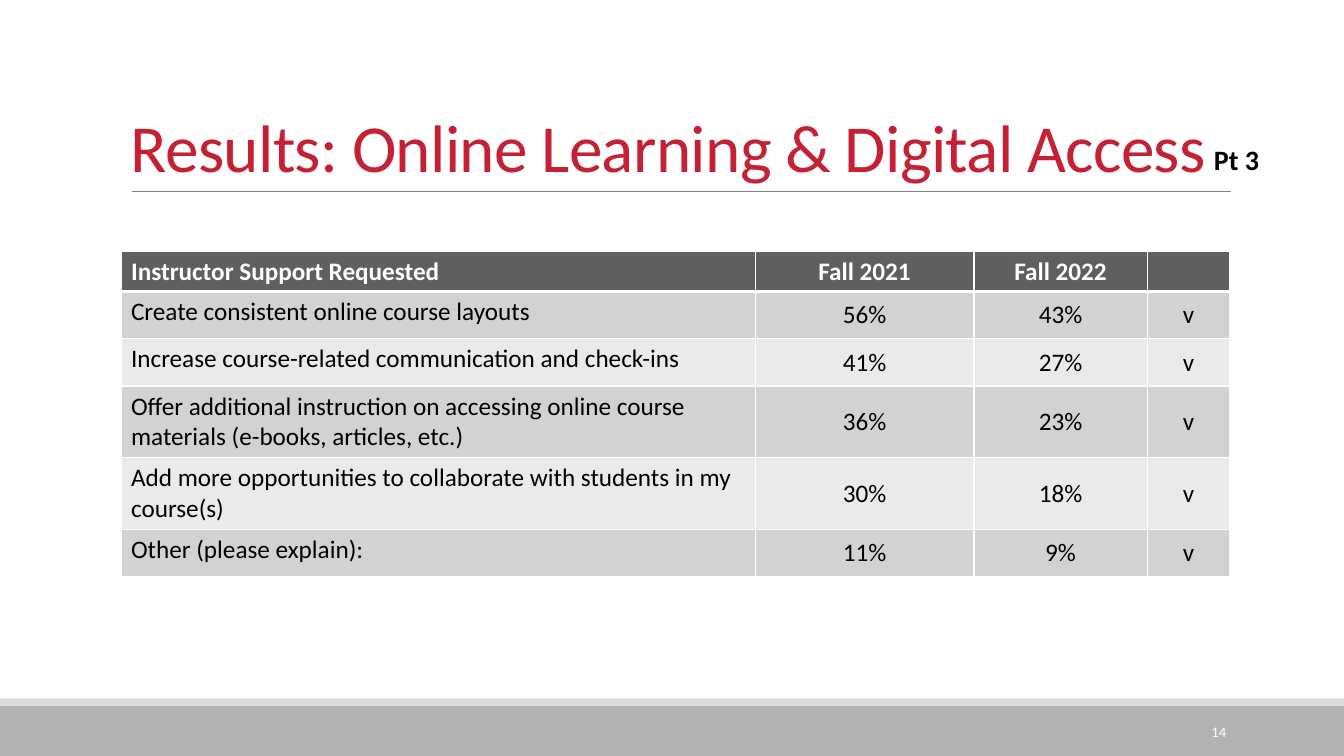
"""Build the slide on instructor support requested, with its table of survey shares."""
import lxml.etree
import pptx
import pptx.dml.color
import pptx.enum.shapes
import pptx.enum.text
import pptx.oxml.ns
import pptx.util

WIDTH, HEIGHT = 13.33, 7.5
FONT = "Calibri"
TITLE = "Results: Online Learning & Digital Access"
PART = "Pt 3"
PAGE = "14"
HEADER = ("Instructor Support Requested", "Fall 2021", "Fall 2022", "")
ANSWERS = [
    ("Create consistent online course layouts", "56%", "43%", "v"),
    ("Increase course-related communication and check-ins", "41%", "27%", "v"),
    ("Offer additional instruction on accessing online course materials (e-books, articles, etc.)", "36%", "23%", "v"),
    ("Add more opportunities to collaborate with students in my course(s)", "30%", "18%", "v"),
    ("Other (please explain):", "11%", "9%", "v"),
]
COLUMN_WIDTHS = (6.29, 2.17, 1.72, 0.82)
ROW_HEIGHTS = (0.39, 0.47, 0.47, 0.71, 0.71, 0.47)
HEADER_FILL, BODY_FILLS = "5F5F5F", ("D2D2D2", "EAEAEA")
BANDS = [(7, 0.5, "B2B2B2"), (6.93, 0.07, "DDDDDD")]
LEFT, TABLE_TOP, CONTENT_WIDTH = 1.2, 2.49, sum(COLUMN_WIDTHS)
RULE_LEFT, RULE_RIGHT, RULE_TOP = 1.31, 12.21, 1.9

ALIGN = pptx.enum.text.PP_ALIGN
ANCHOR = pptx.enum.text.MSO_ANCHOR
inches = pptx.util.Inches
points = pptx.util.Pt


def color(value):
    return pptx.dml.color.RGBColor.from_string(value)


def paint(fill, value):
    fill.solid()
    fill.fore_color.rgb = color(value)


def write(frame, text, size, value, bold=False, align=ALIGN.LEFT):
    paragraph = frame.paragraphs[0]
    paragraph.alignment = align
    run = paragraph.add_run()
    run.text = text
    run.font.name = FONT
    run.font.size = points(size)
    run.font.bold = bold
    run.font.color.rgb = color(value)
    return paragraph, run


def add_text(slide, box, anchor, text, size, value, wrap=True, **style):
    frame = slide.shapes.add_textbox(*map(inches, box)).text_frame
    frame.word_wrap = wrap
    frame.vertical_anchor = anchor
    return write(frame, text, size, value, **style)


def add_border(cell, side, width):
    properties = cell._tc.get_or_add_tcPr()
    tag = pptx.oxml.ns.qn
    line = lxml.etree.SubElement(properties, tag(f"a:ln{side}"), w=str(points(width)))
    fill = lxml.etree.SubElement(line, tag("a:solidFill"))
    lxml.etree.SubElement(fill, tag("a:srgbClr"), val="FFFFFF")


def add_bands(slide):
    for top, height, value in BANDS:
        band = slide.shapes.add_shape(
            pptx.enum.shapes.MSO_SHAPE.RECTANGLE, 0, inches(top), inches(WIDTH), inches(height))
        band.shadow.inherit = False
        paint(band.fill, value)
        band.line.fill.background()


def add_rule(slide):
    ends = map(inches, (RULE_LEFT, RULE_TOP, RULE_RIGHT, RULE_TOP))
    rule = slide.shapes.add_connector(pptx.enum.shapes.MSO_CONNECTOR.STRAIGHT, *ends)
    rule.line.color.rgb = color("808080")
    rule.line.width = points(0.5)
    lxml.etree.SubElement(rule._element.spPr, pptx.oxml.ns.qn("a:effectLst"))


def add_answers(slide):
    rows = [HEADER, *ANSWERS]
    box = map(inches, (LEFT, TABLE_TOP, CONTENT_WIDTH, sum(ROW_HEIGHTS)))
    table = slide.shapes.add_table(len(rows), len(HEADER), *box).table
    for column, width in zip(table.columns, COLUMN_WIDTHS):
        column.width = inches(width)
    for row_index, texts in enumerate(rows):
        table.rows[row_index].height = inches(ROW_HEIGHTS[row_index])
        is_header = row_index == 0
        for column_index, text in enumerate(texts):
            cell = table.cell(row_index, column_index)
            centred = column_index > 0
            if centred and not is_header:
                cell.vertical_anchor = ANCHOR.MIDDLE
            for side in "LRTB":
                heavy = (row_index, side) in ((0, "B"), (1, "T"))
                add_border(cell, side, 3 if heavy else 1)
            paint(cell.fill, HEADER_FILL if is_header else BODY_FILLS[(row_index - 1) % 2])
            if text:
                write(cell.text_frame, text, 18, "FFFFFF" if is_header else "000000",
                      bold=is_header, align=ALIGN.CENTER if centred else ALIGN.LEFT)


def main():
    presentation = pptx.Presentation()
    presentation.slide_width = inches(WIDTH)
    presentation.slide_height = inches(HEIGHT)
    slide = presentation.slides.add_slide(presentation.slide_layouts[6])
    add_bands(slide)
    add_rule(slide)
    paragraph, run = add_text(
        slide, (LEFT, 0.31, CONTENT_WIDTH, 1.59), ANCHOR.BOTTOM, TITLE, 48, "C52033")
    paragraph.line_spacing = 0.85
    run.font._element.set("spc", "-50")
    add_answers(slide)
    add_text(slide, (10.83, 7.06, 1.43, 0.4), ANCHOR.MIDDLE, PAGE, 10.5, "FFFFFF", align=ALIGN.RIGHT)
    add_text(slide, (11.94, 1.36, 0.65, 0.44), ANCHOR.TOP, PART, 20, "000000", wrap=False, bold=True)
    presentation.save("out.pptx")


if __name__ == "__main__":
    main()
